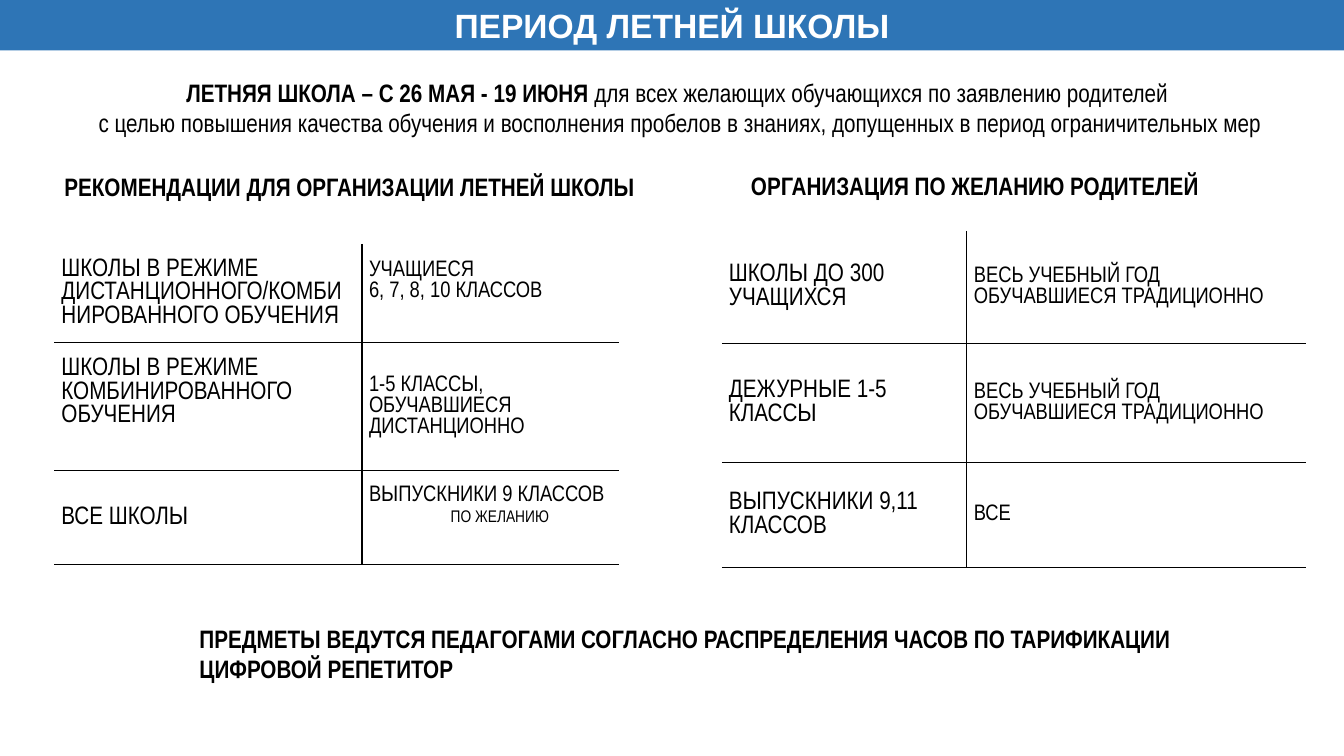
from lxml import etree
from pptx import Presentation
from pptx.dml.color import RGBColor
from pptx.enum.text import MSO_ANCHOR, MSO_AUTO_SIZE, PP_ALIGN
from pptx.oxml.ns import qn
from pptx.util import Inches, Pt

CENTER, LEFT = PP_ALIGN.CENTER, PP_ALIGN.LEFT
MIDDLE = MSO_ANCHOR.MIDDLE
NO_AUTOFIT = MSO_AUTO_SIZE.NONE
TITLE_ONLY = 5
COLORS = {"band": "2E75B6", "text": "000000", "title": "FFFFFF", "rule": "000000"}
RULE_WIDTH = Pt(1)
SIDES = ("L", "R", "T", "B")


def write_paragraph(paragraph, *runs, size=18, bold=False, color="text",
                    font="Arial Narrow", align=LEFT, before=0, indent=0):
    paragraph.alignment = align
    paragraph.line_spacing = 1.0
    paragraph.space_before = Pt(before)
    if indent:
        paragraph._p.get_or_add_pPr().set("marL", str(Inches(indent)))
    for index, words in enumerate(runs):
        run = paragraph.add_run()
        run.text = words
        run.font.name = font
        run.font.size = Pt(size)
        run.font.bold = bold and index == 0
        run.font.color.rgb = RGBColor.from_string(COLORS[color])


def next_paragraph(frame, index):
    return frame.paragraphs[0] if index == 0 else frame.add_paragraph()


def add_title(slide, box, words):
    title = slide.shapes.title
    title.left, title.top, title.width, title.height = map(Inches, box)
    title.fill.solid()
    title.fill.fore_color.rgb = RGBColor.from_string(COLORS["band"])
    frame = title.text_frame
    frame.auto_size = NO_AUTOFIT
    frame.vertical_anchor = MIDDLE
    write_paragraph(frame.paragraphs[0], words, size=24, bold=True,
                    color="title", font="Arial", align=CENTER)


def add_text(slide, box, lines, wrap=True, **style):
    frame = slide.shapes.add_textbox(*map(Inches, box)).text_frame
    frame.word_wrap = wrap
    for index, runs in enumerate(lines):
        write_paragraph(next_paragraph(frame, index), *runs, **style)
    return frame


def set_borders(cell, visible):
    properties = cell._tc.get_or_add_tcPr()
    for index, side in enumerate(SIDES):
        line = etree.Element(qn(f"a:ln{side}"), w=str(RULE_WIDTH))
        if side in visible:
            fill = etree.SubElement(line, qn("a:solidFill"))
            etree.SubElement(fill, qn("a:srgbClr"), val=COLORS["rule"])
        else:
            etree.SubElement(line, qn("a:noFill"))
        properties.insert(index, line)


def add_schedule(slide, box, columns, heights, rows):
    table = slide.shapes.add_table(len(rows), len(columns), *map(Inches, box)).table
    table.first_row = table.horz_banding = False
    for column, width in zip(table.columns, columns):
        column.width = Inches(width)
    for row, height in zip(table.rows, heights):
        row.height = Inches(height)
    for row_index, row in enumerate(rows):
        for column_index, (lines, lift) in enumerate(row):
            cell = table.cell(row_index, column_index)
            cell.fill.background()
            cell.vertical_anchor = MIDDLE
            cell.margin_left = cell.margin_right = Inches(0.07)
            cell.margin_top = Inches(0.04)
            cell.margin_bottom = Inches(0.04 + lift)
            set_borders(cell, ("L" if column_index else "R")
                        + ("T" if row_index else "") + "B")
            for index, (words, style) in enumerate(lines):
                write_paragraph(next_paragraph(cell.text_frame, index), words,
                                **{"size": 16 if column_index else 18, **style})


def entry(*lines, lift=0, last_style=None):
    styles = [{}] * (len(lines) - 1) + [last_style or {}]
    return list(zip(lines, styles)), lift


def build_summer_school(slide):
    add_title(slide, (0, 0, 13.33, 0.5), "ПЕРИОД ЛЕТНЕЙ ШКОЛЫ")
    intro = add_text(slide, (0.54, 0.72, 12.41, 0.71), [
        ("ЛЕТНЯЯ ШКОЛА – С 26 МАЯ - 19 ИЮНЯ ",
         "для всех желающих обучающихся по заявлению родителей "),
    ], bold=True, align=CENTER)
    write_paragraph(intro.add_paragraph(),
                    "с целью повышения качества обучения и восполнения пробелов "
                    "в знаниях, допущенных в период ограничительных мер",
                    align=CENTER)
    add_text(slide, (0.54, 1.65, 5.94, 0.4),
             [("РЕКОМЕНДАЦИИ ДЛЯ ОРГАНИЗАЦИИ ЛЕТНЕЙ ШКОЛЫ",)], wrap=False, bold=True)
    add_text(slide, (7.35, 1.64, 5.35, 0.4),
             [("ОРГАНИЗАЦИЯ ПО ЖЕЛАНИЮ РОДИТЕЛЕЙ",)], bold=True)
    add_schedule(slide, (0.54, 2.42, 5.6, 3.18), (3.05, 2.55), (0.98, 1.27, 0.93), [
        (entry("ШКОЛЫ В РЕЖИМЕ ДИСТАНЦИОННОГО/КОМБИНИРОВАННОГО ОБУЧЕНИЯ"),
         entry("УЧАЩИЕСЯ", "6, 7, 8, 10 КЛАССОВ", lift=0.24)),
        (entry("ШКОЛЫ В РЕЖИМЕ КОМБИНИРОВАННОГО ОБУЧЕНИЯ", lift=0.28),
         entry("1-5 КЛАССЫ, ОБУЧАВШИЕСЯ ДИСТАНЦИОННО")),
        (entry("ВСЕ ШКОЛЫ"),
         entry("ВЫПУСКНИКИ 9 КЛАССОВ", "ПО ЖЕЛАНИЮ", lift=0.24,
               last_style={"size": 12, "indent": 0.81, "before": 3})),
    ])
    all_year = "ВЕСЬ УЧЕБНЫЙ ГОД ОБУЧАВШИЕСЯ ТРАДИЦИОННО"
    add_schedule(slide, (7.16, 2.29, 5.79, 3.34), (2.43, 3.36), (1.12, 1.18, 1.04), [
        (entry("ШКОЛЫ ДО 300 УЧАЩИХСЯ"), entry(all_year)),
        (entry("ДЕЖУРНЫЕ 1-5 КЛАССЫ"), entry(all_year)),
        (entry("ВЫПУСКНИКИ 9,11 КЛАССОВ"), entry("ВСЕ")),
    ])
    add_text(slide, (1.88, 6.13, 10.02, 0.71), [
        ("ПРЕДМЕТЫ ВЕДУТСЯ ПЕДАГОГАМИ СОГЛАСНО РАСПРЕДЕЛЕНИЯ ЧАСОВ ПО ТАРИФИКАЦИИ",),
        ("ЦИФРОВОЙ РЕПЕТИТОР",),
    ], wrap=False, bold=True)


def main():
    presentation = Presentation()
    presentation.slide_width = Inches(13.33)
    presentation.slide_height = Inches(7.5)
    layout = presentation.slide_layouts[TITLE_ONLY]
    build_summer_school(presentation.slides.add_slide(layout))
    presentation.save("out.pptx")


if __name__ == "__main__":
    main()
